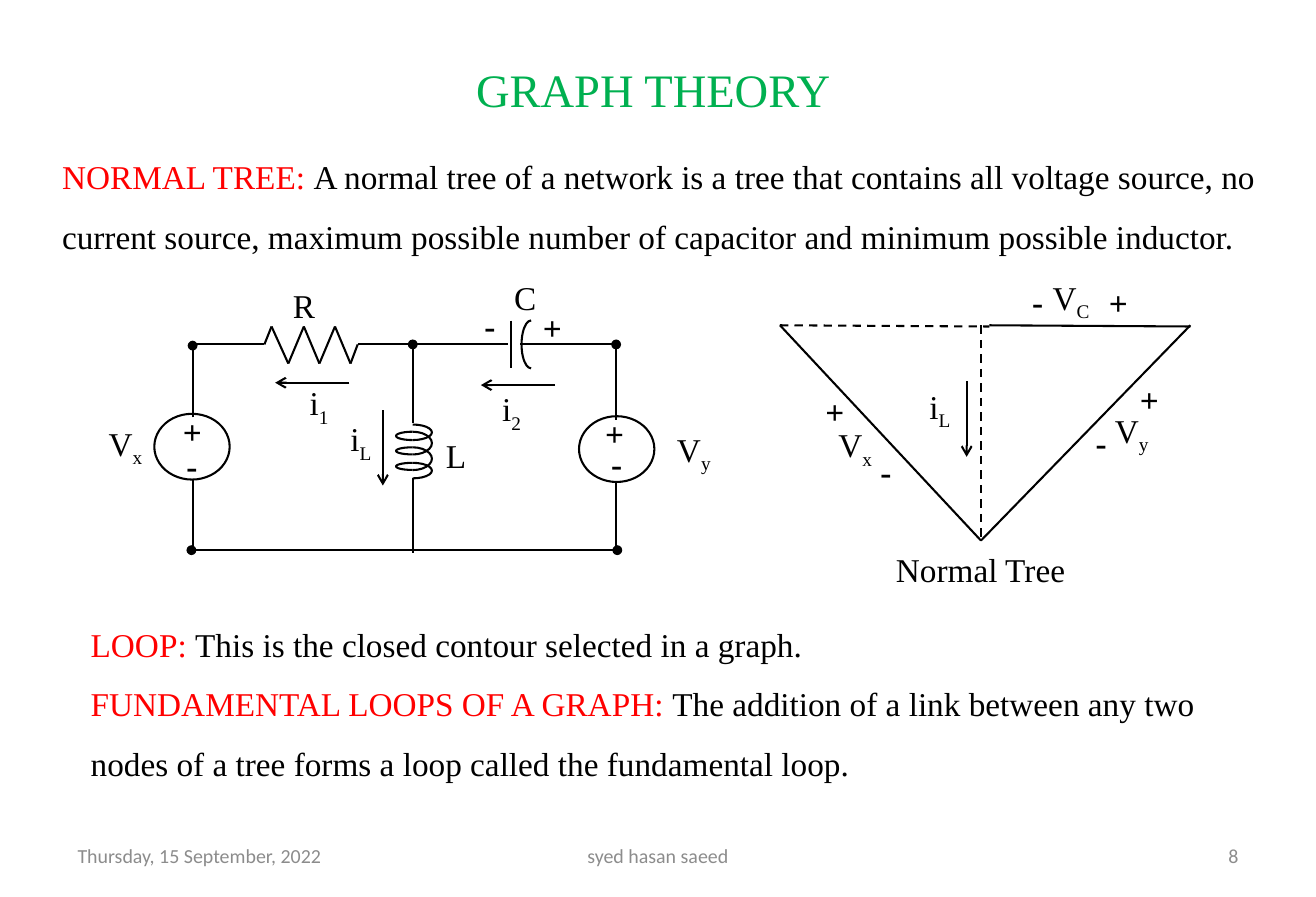
from itertools import pairwise
from typing import NamedTuple

from lxml import etree
from pptx import Presentation
from pptx import util as u
from pptx.dml.color import RGBColor
from pptx.enum import dml, shapes, text
from pptx.oxml import ns

SERIF = "Times New Roman"
BLACK, RED, GREEN, GREY = "000000", "FF0000", "00B050", "8C8C8C"


class Wire(NamedTuple):
    x1: float
    y1: float
    x2: float
    y2: float
    head: str = ""
    tail: str = ""
    dashed: bool = False


class Label(NamedTuple):
    left: float
    top: float
    base: str
    sub: str = ""
    width: float = 0.7


class Sign(NamedTuple):
    left: float
    top: float
    mark: str


class Footer(NamedTuple):
    left: float
    width: float
    wording: str
    align: text.PP_ALIGN


def paint(colour_format, colour: str) -> None:
    colour_format.rgb = RGBColor.from_string(colour)


def style_font(font, size: float, colour: str, name: str = SERIF) -> None:
    font.name, font.size = name, u.Pt(size)
    paint(font.color, colour)


def inches(*lengths: float) -> list:
    return [u.Inches(length) for length in lengths]


def add_box(slide, left: float, top: float, width: float, height: float):
    """Add an empty wrapping text box and return its text frame."""
    frame = slide.shapes.add_textbox(*inches(left, top, width, height)).text_frame
    frame.word_wrap = True
    return frame


def style_line(line) -> None:
    paint(line.color, BLACK)
    line.width = u.Pt(1.25)


def draw_wire(slide, wire: Wire) -> None:
    connector = slide.shapes.add_connector(
        shapes.MSO_CONNECTOR.STRAIGHT, *inches(wire.x1, wire.y1, wire.x2, wire.y2))
    style_line(connector.line)
    if wire.dashed:
        connector.line.dash_style = dml.MSO_LINE.DASH
    properties = connector._element.spPr
    outline = properties.find(ns.qn("a:ln"))
    for tag, end in (("a:headEnd", wire.head), ("a:tailEnd", wire.tail)):
        if end:
            etree.SubElement(outline, ns.qn(tag), type=end)
    etree.SubElement(properties, ns.qn("a:effectLst"))


def draw_outline(slide, kind, left: float, top: float, width: float, height: float):
    outline = slide.shapes.add_shape(kind, *inches(left, top, width, height))
    outline.shadow.inherit = False
    outline.fill.background()
    style_line(outline.line)
    return outline


def draw_half_turn(slide, centre: float, radius: float, top: float, bottom: float,
                   right: bool) -> None:
    """Draw the right or left half of an ellipse."""
    arc = draw_outline(slide, shapes.MSO_SHAPE.ARC,
                       centre - radius, top, 2 * radius, bottom - top)
    # Arc angles are 60000ths of a degree; adjustments count in 100000s.
    start, end = (270, 90) if right else (90, 270)
    arc.adjustments[0], arc.adjustments[1] = start * 0.6, end * 0.6


def draw_label(slide, label: Label) -> None:
    paragraph = add_box(slide, label.left, label.top, label.width, 0.44).paragraphs[0]
    style_font(paragraph.font, 20, BLACK)
    paragraph.add_run().text = label.base
    if label.sub:
        subscript = paragraph.add_run()
        subscript.text = label.sub
        subscript._r.get_or_add_rPr().set("baseline", "-25000")


def draw_sign(slide, sign: Sign) -> None:
    paragraph = add_box(slide, sign.left, sign.top, 0.47, 0.44).paragraphs[0]
    paragraph.text = sign.mark
    style_font(paragraph.font, 20, BLACK)
    paragraph.font.bold = True


def write_definitions(frame, definitions: list[tuple[str, str]]) -> None:
    for index, (term, meaning) in enumerate(definitions):
        paragraph = frame.add_paragraph() if index else frame.paragraphs[0]
        paragraph.line_spacing = 1.5
        for wording, colour in ((term + ": ", RED), (meaning, BLACK)):
            run = paragraph.add_run()
            run.text = wording
            style_font(run.font, 20, colour)


def draw_footer(slide, footer: Footer) -> None:
    frame = add_box(slide, footer.left, 6.95, footer.width, 0.4)
    frame.vertical_anchor = text.MSO_ANCHOR.MIDDLE
    paragraph = frame.paragraphs[0]
    paragraph.text, paragraph.alignment = footer.wording, footer.align
    style_font(paragraph.font, 12, GREY, "Calibri")


RESISTOR = [(1.6, 2.88), (2.21, 2.88), (2.27, 2.73), (2.41, 3.04), (2.54, 2.73),
            (2.67, 3.04), (2.8, 2.73), (2.93, 3.04), (2.99, 2.88), (3.49, 2.88)]
COIL_RIGHT = [(3.55, 3.68), (3.61, 3.8), (3.74, 3.93), (3.87, 4)]
COIL_LEFT = [(3.61, 3.68), (3.74, 3.8), (3.87, 3.93)]
SOURCES = [(1.29, 3.46), (4.84, 3.48)]

CIRCUIT = [Wire(*start, *end) for start, end in pairwise(RESISTOR)] + [
    Wire(3.45, 3.54, 3.45, 2.92), Wire(3.45, 4.62, 3.45, 4),
    Wire(4.27, 2.68, 4.27, 3.08),
    Wire(4.35, 2.88, 5.15, 2.88, tail="oval"),
    Wire(3.45, 2.88, 4.25, 2.88, head="oval"),
    Wire(1.6, 4.6, 5.16, 4.6, head="oval", tail="oval"),
    Wire(5.15, 3.51, 5.15, 2.91), Wire(5.15, 4.59, 5.15, 4.03),
    Wire(1.61, 3.49, 1.61, 2.89, tail="oval"), Wire(1.61, 4.57, 1.61, 4.01),
]
CURRENTS = [
    Wire(2.92, 3.2, 2.3, 3.2, tail="arrow"), Wire(3.2, 3.43, 3.2, 4.06, tail="arrow"),
    Wire(4.64, 3.22, 4.02, 3.22, tail="arrow"), Wire(8.08, 3.19, 8.08, 3.82, tail="arrow"),
]
TREE = [
    Wire(6.52, 2.72, 8.2, 4.52), Wire(9.95, 2.72, 8.2, 4.52), Wire(8.27, 2.72, 9.95, 2.73),
    Wire(6.52, 2.72, 8.27, 2.73, dashed=True), Wire(8.2, 2.72, 8.2, 4.52, dashed=True),
]
LABELS = [
    Label(4.2, 2.27, "C", width=0.47), Label(2.35, 2.34, "R", width=0.47),
    Label(3.63, 3.59, "L", width=0.47), Label(0.81, 3.49, "V", "x"),
    Label(5.56, 3.54, "V", "y", 0.78), Label(2.49, 3.15, "i", "1", 0.63),
    Label(4.1, 3.2, "i", "2", 0.63), Label(2.83, 3.45, "i", "L", 0.63),
    Label(8.7, 2.27, "V", "C"), Label(6.91, 3.5, "V", "x"),
    Label(9.22, 3.38, "V", "y", 0.78), Label(7.67, 3.18, "i", "L", 0.63),
    Label(7.39, 4.54, "Normal Tree", width=1.88),
]
SIGNS = [
    Sign(4.96, 3.41, "+"), Sign(5.01, 3.66, "-"), Sign(1.43, 3.39, "+"), Sign(1.46, 3.67, "-"),
    Sign(4.44, 2.52, "+"), Sign(3.95, 2.5, "-"), Sign(6.8, 3.22, "+"), Sign(7.26, 3.72, "-"),
    Sign(9.43, 3.12, "+"), Sign(9.06, 3.48, "-"), Sign(9.17, 2.31, "+"), Sign(8.53, 2.3, "-"),
]
FOOTERS = [
    Footer(0.55, 2.57, "Thursday, 15 September, 2022", text.PP_ALIGN.LEFT),
    Footer(3.76, 3.48, "syed hasan saeed", text.PP_ALIGN.CENTER),
    Footer(7.88, 2.57, "8", text.PP_ALIGN.RIGHT),
]


def main() -> None:
    deck = Presentation()
    deck.slide_width, deck.slide_height = inches(11, 7.5)
    slide = deck.slides.add_slide(deck.slide_layouts[5])

    title = slide.shapes.title
    title.left, title.top, title.width, title.height = inches(0.26, 0.39, 10.4, 0.7)
    title.text_frame.text = "GRAPH THEORY"
    title.text_frame.vertical_anchor = text.MSO_ANCHOR.MIDDLE
    heading = title.text_frame.paragraphs[0]
    heading.alignment = text.PP_ALIGN.CENTER
    style_font(heading.font, 28, GREEN)

    write_definitions(add_box(slide, 0.42, 1.09, 10.31, 1.11), [
        ("NORMAL TREE", "A normal tree of a network is a tree that contains all voltage source, "
         "no current source, maximum possible number of capacitor and minimum possible inductor."),
    ])
    for wire in CIRCUIT + CURRENTS + TREE:
        draw_wire(slide, wire)
    for top, bottom in COIL_RIGHT:
        draw_half_turn(slide, 3.45, 0.16, top, bottom, right=True)
    for top, bottom in COIL_LEFT:
        draw_half_turn(slide, 3.45, 0.14, top, bottom, right=False)
    draw_half_turn(slide, 4.44, 0.08, 2.68, 3.08, right=False)
    for left, top in SOURCES:
        draw_outline(slide, shapes.MSO_SHAPE.OVAL, left, top, 0.63, 0.55)
    for label in LABELS:
        draw_label(slide, label)
    for sign in SIGNS:
        draw_sign(slide, sign)
    write_definitions(add_box(slide, 0.66, 5, 9.53, 2.12), [
        ("LOOP", "This is the closed contour selected in a graph."),
        ("FUNDAMENTAL LOOPS OF A GRAPH", "The addition of a link between any two nodes of a tree "
         "forms a loop called the fundamental loop."),
    ])
    for footer in FOOTERS:
        draw_footer(slide, footer)
    deck.save("out.pptx")


if __name__ == "__main__":
    main()
